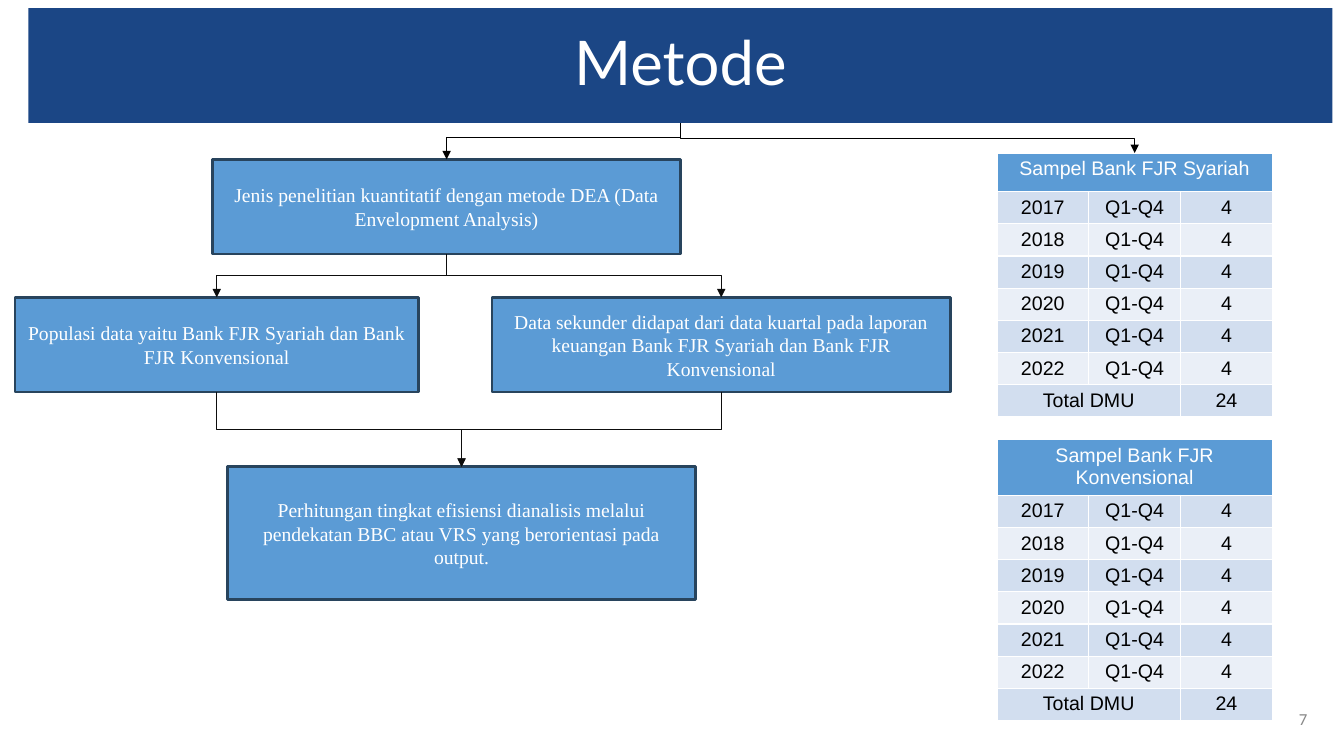
from lxml import etree
from pptx import Presentation
from pptx.dml.color import RGBColor
from pptx.enum.shapes import MSO_CONNECTOR, MSO_SHAPE
from pptx.enum.text import MSO_ANCHOR, PP_ALIGN
from pptx.oxml.ns import qn
from pptx.util import Pt

ELBOW = MSO_CONNECTOR.ELBOW
RECTANGLE = MSO_SHAPE.RECTANGLE
MIDDLE = MSO_ANCHOR.MIDDLE
CENTER, RIGHT = PP_ALIGN.CENTER, PP_ALIGN.RIGHT

THEME = {
    "banner": RGBColor(0x1B, 0x46, 0x85),
    "step": RGBColor(0x5B, 0x9B, 0xD5),
    "outline": RGBColor(0x28, 0x44, 0x5D),
    "flow": RGBColor(0x0D, 0x0D, 0x0D),
    "bands": [RGBColor(0xEA, 0xEF, 0xF7), RGBColor(0xD2, 0xDE, 0xEF)],
    "light": RGBColor(0xFF, 0xFF, 0xFF),
    "dark": RGBColor(0x00, 0x00, 0x00),
    "muted": RGBColor(0x88, 0x88, 0x88),
    "title_size": 44,
    "body_size": 14,
    "number_size": 12,
}


def write(frame, text, font, size, color, align=CENTER):
    frame.word_wrap = True
    paragraph = frame.paragraphs[0]
    paragraph.text = text
    paragraph.alignment = align
    paragraph.font.name = font
    paragraph.font.size = Pt(size)
    paragraph.font.bold = False
    paragraph.font.color.rgb = color
    return paragraph


def add_block(left, top, width, height, fill):
    block = slide.shapes.add_shape(RECTANGLE, Pt(left), Pt(top), Pt(width), Pt(height))
    block.shadow.inherit = False
    block.fill.solid()
    block.fill.fore_color.rgb = fill
    block.text_frame.vertical_anchor = MIDDLE
    return block


prs = Presentation()
prs.slide_width, prs.slide_height = Pt(960), Pt(540)
slide = prs.slides.add_slide(prs.slide_layouts[6])

banner = add_block(20.2, 5.8, 931.6, 82.1, THEME["banner"])
banner.line.fill.background()
heading = write(banner.text_frame, "Metode", "Lato", THEME["title_size"], THEME["light"])
heading.line_spacing = 0.9

page_number = slide.shapes.add_textbox(Pt(900), Pt(499), Pt(41), Pt(28.8))
page_number.text_frame.vertical_anchor = MIDDLE
write(page_number.text_frame, "7", "Calibri", THEME["number_size"], THEME["muted"], RIGHT)

STEPS = [
    (152, 113.8, 334, 67.7,
     "Jenis penelitian kuantitatif dengan metode DEA (Data Envelopment Analysis)"),
    (10.8, 212.4, 288, 67.7,
     "Populasi data yaitu Bank FJR Syariah dan Bank FJR Konvensional"),
    (351.4, 212.4, 327.6, 67.7,
     "Data sekunder didapat dari data kuartal pada laporan keuangan "
     "Bank FJR Syariah dan Bank FJR Konvensional"),
    (162.7, 333.4, 334, 95,
     "Perhitungan tingkat efisiensi dianalisis melalui pendekatan BBC atau VRS "
     "yang berorientasi pada output."),
]
steps = []
for left, top, width, height, text in STEPS:
    step = add_block(left, top, width, height, THEME["step"])
    step.line.color.rgb = THEME["outline"]
    step.line.width = Pt(2)
    write(step.text_frame, text, "Times New Roman", THEME["body_size"], THEME["light"])
    steps.append(step)
method, population, secondary_data, efficiency = steps

YEARS = range(2017, 2023)
ROW_HEIGHT = 23
SAMPLES = [
    ("Sampel Bank FJR Syariah", 109.4, 27.5),
    ("Sampel Bank FJR Konvensional", 314.2, 38),
]
sample_tables = []
for sample, top, header_height in SAMPLES:
    rows = [(sample, "", "")]
    rows += [(str(year), "Q1-Q4", "4") for year in YEARS]
    rows += [("Total DMU", "", "24")]
    height = header_height + ROW_HEIGHT * (len(rows) - 1)
    holder = slide.shapes.add_table(len(rows), 3, Pt(712.1), Pt(top), Pt(196.8), Pt(height))
    table = holder.table
    for r, row in enumerate(rows):
        table.rows[r].height = Pt(ROW_HEIGHT if r else header_height)
        for c, value in enumerate(row):
            cell = table.cell(r, c)
            cell.margin_top, cell.margin_bottom = Pt(3.4), Pt(2.6)
            cell.fill.solid()
            cell.fill.fore_color.rgb = THEME["bands"][r % 2] if r else THEME["step"]
            if value:
                color = THEME["dark"] if r else THEME["light"]
                write(cell.text_frame, value, "Arial", THEME["body_size"], color)
    table.cell(0, 0).merge(table.cell(0, 2))
    table.cell(len(rows) - 1, 0).merge(table.cell(len(rows) - 1, 1))
    sample_tables.append(holder)

FLOWS = [
    (method, secondary_data, 0.5, THEME["flow"]),
    (method, population, 0.5, THEME["flow"]),
    (secondary_data, efficiency, 0.5, THEME["flow"]),
    (population, efficiency, 0.5, THEME["flow"]),
    (banner, sample_tables[0], 0.5, THEME["dark"]),
    (banner, method, 0.4, THEME["dark"]),
]
for source, target, bend, color in FLOWS:
    start_x = source.left + source.width // 2
    start_y = source.top + source.height
    end_x = target.left + target.width // 2
    run, drop = abs(end_x - start_x), target.top - start_y
    left = (start_x + end_x - drop) // 2
    top = (start_y + target.top - run) // 2
    flow = slide.shapes.add_connector(ELBOW, left, top, left + drop, top + run)
    flow.line.color.rgb = color
    flow.line.width = Pt(0.75)
    properties = flow._element.spPr
    turn = properties.find(qn("a:xfrm"))
    if end_x > start_x:
        turn.set("rot", "16200000")
        turn.set("flipH", "1")
    else:
        turn.set("rot", "5400000")
    guides = properties.find(qn("a:prstGeom")).find(qn("a:avLst"))
    etree.SubElement(guides, qn("a:gd"), name="adj1", fmla=f"val {round(bend * 100000)}")
    etree.SubElement(properties.find(qn("a:ln")), qn("a:tailEnd"), type="triangle")
    etree.SubElement(properties, qn("a:effectLst"))

prs.save("out.pptx")
